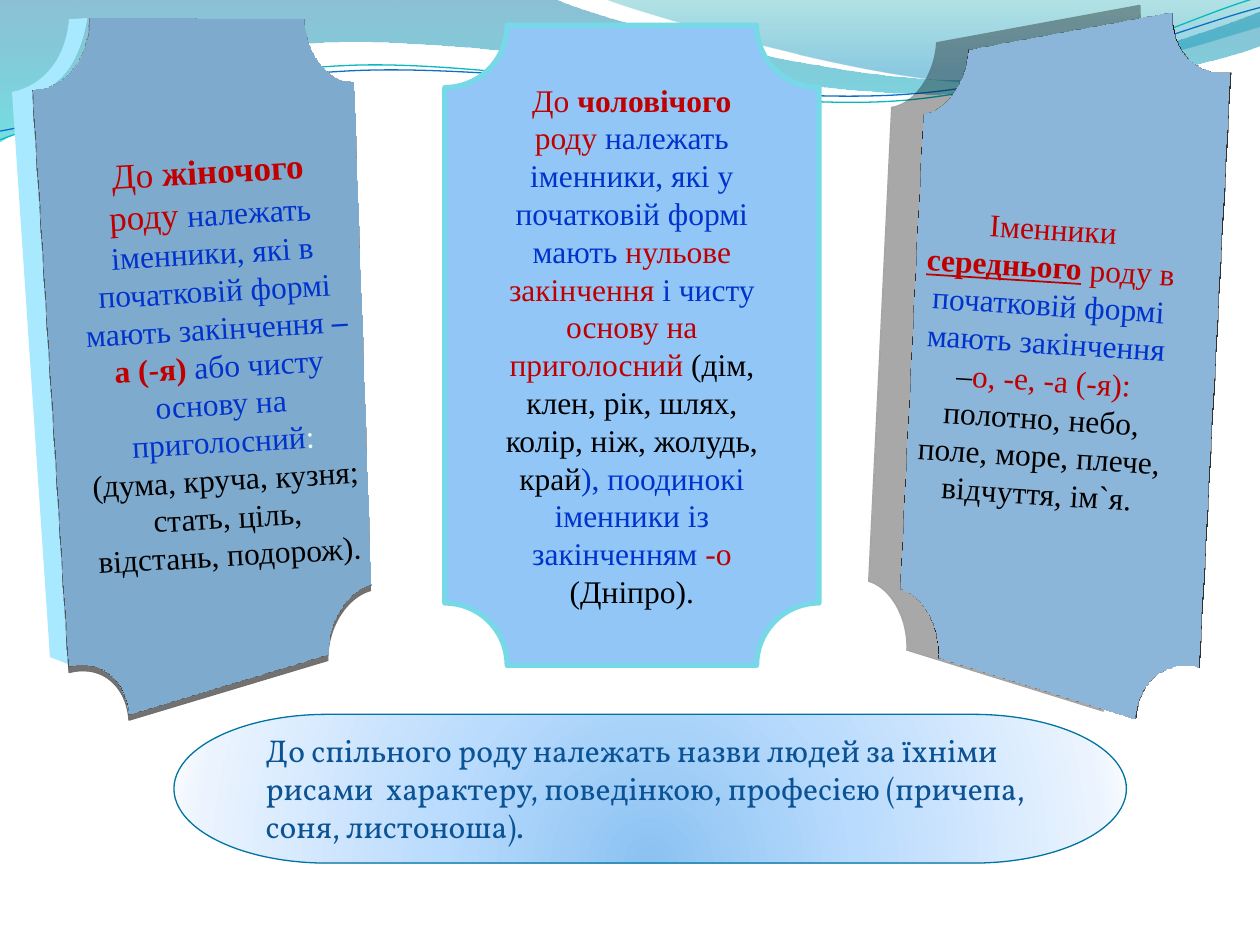
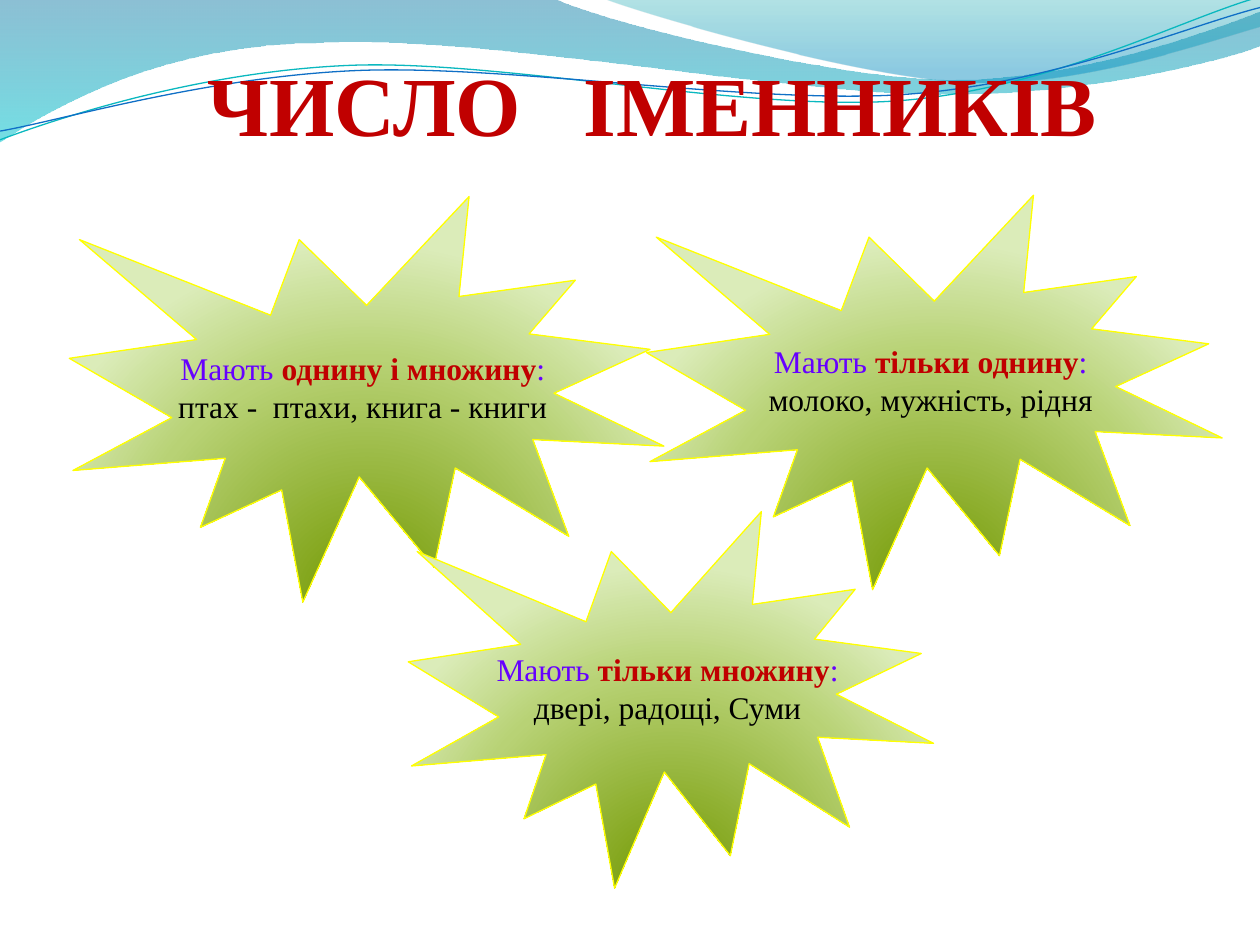
"""Build two slides on the gender and number of Ukrainian nouns."""
from dataclasses import dataclass
from typing import NamedTuple

from lxml import etree
from pptx import Presentation
from pptx.dml.color import RGBColor
from pptx.enum.shapes import MSO_SHAPE as Preset
from pptx.enum.text import MSO_ANCHOR as Anchor, MSO_AUTO_SIZE as AutoSize, PP_ALIGN as Align
from pptx.oxml import parse_xml
from pptx.oxml.ns import nsdecls, qn
from pptx.util import Pt


@dataclass(frozen=True)
class Theme:
    """Colours, fonts and type sizes shared by the slides."""
    red: str = "C00000"
    blue: str = "0033CC"
    violet: str = "6600FF"
    black: str = "000000"
    pale: str = "E9F9FB"
    note: str = "0B5394"
    panel: str = "91C6F7"
    panel_left: str = "6F9ABE"
    panel_right: str = "658FB2"
    panel_edge: str = "77D9E8"
    panel_side: str = "A9E9FF"
    white: str = "FFFFFF"
    note_edge: str = "0074A1"
    star_edge: str = "FFFF00"
    teal_line: str = "0AB8BF"
    blue_line: str = "0F6FC6"
    serif: str = "Times New Roman"
    note_font: str = "Vollkorn"
    title_size: int = 48
    lead_size: int = 20
    body_size: int = 18
    wave_main: tuple = ((0, "0074A1", 45), (100, "00C6CF", 55))
    wave_side: tuple = ((0, "00A1A9", 30), (80, "008BBF", 45))
    note_fill: tuple = ((0, "8BC2F1", 100), (43, "B9DBFD", 100),
                        (93, "EAF3FE", 100), (100, "F8FBFF", 100))
    star_fill: tuple = ((0, "729800", 100), (68, "B8D275", 100), (100, "DBECB9", 100))


THEME = Theme()
LINEAR = '<a:lin ang="5400000" scaled="0"/>'
RADIAL = ('<a:path path="circle"><a:fillToRect l="50000" t="130000" '
          'r="50000" b="-30000"/></a:path>')


class Text(NamedTuple):
    """A run of text with its formatting."""
    words: str
    color: str
    bold: bool = False
    underline: bool = False
    size: int = THEME.body_size
    font: str = THEME.serif


class Camera(NamedTuple):
    """A perspective view, with angles in degrees."""
    preset: str
    field: int
    latitude: float
    longitude: float
    revolution: float


LEFT_VIEW = Camera("perspectiveHeroicExtremeRightFacing", 55, 8.1, 324, 2.7)
RIGHT_VIEW = Camera("perspectiveHeroicExtremeLeftFacing", 80, 0.8, 37, 0.2)
WAVES = (
    ((0, -0.7), (316.8, -0.7), (342.7, 12.2, 478.1, 45.4, 545.8, 45.4),
     (614.2, 45.4, 689.8, 18.7, 720, 6.5), (720.7, 25.9),
     (707.8, 31.7, 626.4, 54.7, 537.1, 54), (447.8, 54, 275, 20.2, 185, 24.5),
     (92.9, 25.2, 33.1, 59.8, -0.7, 81.4)),
    ((344.9, -0.7), (366.5, 7.9, 491, 44.6, 553.7, 46.8),
     (616.3, 49.7, 691.9, 23, 720, 15.1), (720, 0)),
)
WAVE_LINES = (
    ((0, 79.9), (34.6, 67, 113.8, 41, 199.4, 37.4),
     (284.4, 33.8, 427, 64.1, 513.4, 57.6), (599.8, 51.1, 675.4, 10.8, 718.6, -1.4)),
    ((0, 74.9), (33.8, 69.1, 118.1, 43.9, 203.8, 40.3),
     (290.2, 36.7, 429.8, 59.8, 516.2, 54), (601.9, 48.2, 677.5, 15.1, 720, 4.3)),
)
PANEL_SIDE = ((6.9, 52.6), (28, 48, 38, 30, 39.5, 11), (50, 10.3),
              (46, 34, 36, 49, 20, 53), (39, 379.5), (28.6, 375.5))
FEMININE = (
    Text("До ", THEME.red, size=THEME.lead_size),
    Text("жіночого", THEME.red, True, size=THEME.lead_size),
    Text(" роду ", THEME.red, size=THEME.lead_size),
    Text("належать іменники, які в початковій формі мають закінчення ", THEME.blue),
    Text("– ", THEME.blue, True),
    Text("а (-я) ", THEME.red, True),
    Text("або чисту основу на приголосний", THEME.blue),
    Text(": ", THEME.pale),
    Text("(дума, круча, кузня; стать, ціль, відстань, подорож).", THEME.black),
)
MASCULINE = (
    Text("До ", THEME.red),
    Text("чоловічого", THEME.red, True),
    Text(" роду ", THEME.red),
    Text("належать іменники, які у початковій формі мають ", THEME.blue),
    Text("нульове закінчення ", THEME.red),
    Text("і чисту ", THEME.blue),
    Text("основу на приголосний ", THEME.red),
    Text("(дім, клен, рік, шлях, колір, ніж, жолудь, край", THEME.black),
    Text("), поодинокі іменники із закінченням ", THEME.blue),
    Text("-о ", THEME.red),
    Text("(Дніпро).", THEME.black),
)
NEUTER = (
    Text("Іменники ", THEME.red),
    Text("середнього", THEME.red, True, True),
    Text(" роду в ", THEME.red),
    Text("початковій формі мають закінчення ", THEME.blue),
    Text("–", THEME.black),
    Text("о, -е, -а (-я):", THEME.red),
    Text(" полотно, небо, поле, море, плече, відчуття, ім`я.", THEME.black),
)
COMMON = ("До спільного роду належать назви людей за їхніми рисами  характеру, "
          "поведінкою, професією (причепа, соня, листоноша).")
STARS = (
    ((39.6, 112.3, 339.8, 231.8), "однину і множину", "птах -  птахи, книга - книги"),
    ((233.3, 292.3, 300.2, 215.3), "тільки множину", "двері, радощі, Суми"),
    ((369.4, 111.6, 329, 225.4), "тільки однину", "молоко, мужність, рідня"),
)


def points(*values):
    """Convert numbers to lengths in points."""
    return [Pt(value) for value in values]


def set_fill(shape, color):
    """Fill a shape with one colour."""
    shape.fill.solid()
    shape.fill.fore_color.rgb = RGBColor.from_string(color)


def set_gradient(shape, stops, direction):
    """Fill a shape with a gradient of (position, colour, opacity) stops."""
    marks = "".join(
        f'<a:gs pos="{position * 1000}"><a:srgbClr val="{color}">'
        f'<a:alpha val="{opacity * 1000}"/></a:srgbClr></a:gs>'
        for position, color, opacity in stops)
    shape.fill.gradient()
    properties = shape.element.spPr
    properties.replace(properties.find(qn("a:gradFill")), parse_xml(
        f'<a:gradFill {nsdecls("a")} rotWithShape="1"><a:gsLst>{marks}</a:gsLst>'
        f'{direction}</a:gradFill>'))


def set_line(shape, color=None, width=0.75):
    """Outline a shape, or remove its outline."""
    if color is None:
        shape.line.fill.background()
    else:
        shape.line.color.rgb = RGBColor.from_string(color)
        shape.line.width = Pt(width)


def set_shadow(shape, opacity, blur, distance, angle):
    """Give a shape a black outer shadow."""
    effects = shape.element.spPr.find(qn("a:effectLst"))
    effects.append(parse_xml(
        f'<a:outerShdw {nsdecls("a")} blurRad="{Pt(blur)}" dist="{Pt(distance)}" '
        f'dir="{angle * 60000}" rotWithShape="0"><a:srgbClr val="{THEME.black}">'
        f'<a:alpha val="{opacity * 1000}"/></a:srgbClr></a:outerShdw>'))


def set_perspective(shape, camera):
    """Turn a shape in space and give it a thin edge."""
    preset, *degrees = camera
    angles = [round(degree * 60000) for degree in degrees]
    properties = shape.element.spPr
    properties.append(parse_xml(
        '<a:scene3d {}><a:camera prst="{}" fov="{}"><a:rot lat="{}" lon="{}" rev="{}"/>'
        '</a:camera><a:lightRig rig="threePt" dir="t"/></a:scene3d>'.format(
            nsdecls("a"), preset, *angles)))
    solid = etree.SubElement(properties, qn("a:sp3d"), extrusionH=str(Pt(1)))
    color = etree.SubElement(solid, qn("a:extrusionClr"))
    etree.SubElement(color, qn("a:srgbClr"), val=THEME.white)


def write(frame, paragraphs, alignment):
    """Fill a text frame with paragraphs, run by run."""
    for index, texts in enumerate(paragraphs):
        paragraph = frame.add_paragraph() if index else frame.paragraphs[0]
        paragraph.alignment = alignment
        for text in texts:
            run = paragraph.add_run()
            run.text = text.words
            run.font.name = text.font
            run.font.size = Pt(text.size)
            run.font.bold = text.bold
            run.font.underline = text.underline
            run.font.color.rgb = RGBColor.from_string(text.color)


def add_curve(slide, segments, closed):
    """Add an outline of lines and cubic curves to a slide."""
    start, *rest = segments
    builder = slide.shapes.build_freeform(*points(*start))
    for segment in rest:
        pairs = zip(segment[::2], segment[1::2])
        builder.add_line_segments([points(*pair) for pair in pairs], close=False)
    shape = builder.convert_to_shape()
    outline = next(shape.element.iter(qn("a:path")))
    steps = iter(outline.findall(qn("a:lnTo")))
    for segment in rest:
        first, *others = [next(steps) for _ in segment[::2]]
        if others:
            first.tag = qn("a:cubicBezTo")
        for other in others:
            first.append(other[0])
            outline.remove(other)
    if closed:
        etree.SubElement(outline, qn("a:close"))
    shape.shadow.inherit = False
    return shape


def add_waves(slide, master):
    """Draw the wave band and hand it to the master."""
    shapes = []
    for segments, stops in zip(WAVES, (THEME.wave_main, THEME.wave_side)):
        wave = add_curve(slide, segments, True)
        set_gradient(wave, stops, LINEAR)
        set_line(wave)
        shapes.append(wave)
    for segments, color in zip(WAVE_LINES, (THEME.teal_line, THEME.blue_line)):
        curve = add_curve(slide, segments, False)
        curve.fill.background()
        set_line(curve, color)
        shapes.append(curve)
    tree = master.element.cSld.spTree
    for index, shape in enumerate(shapes, start=2):
        tree.insert(index, shape.element)


def add_preset(slide, preset, box):
    """Add a preset shape without a shadow, its text centred in height."""
    shape = slide.shapes.add_shape(preset, *points(*box))
    shape.shadow.inherit = False
    shape.text_frame.vertical_anchor = Anchor.MIDDLE
    return shape


def add_panel(slide, box, texts, color):
    """Add a plaque that describes one gender."""
    panel = add_preset(slide, Preset.PLAQUE, box)
    set_fill(panel, color)
    set_line(panel)
    panel.text_frame.word_wrap = True
    write(panel.text_frame, [texts], Align.CENTER)
    return panel


def add_note(slide):
    """Add the rounded note on the common gender."""
    note = add_preset(slide, Preset.FLOWCHART_TERMINATOR, (99.4, 408.2, 544.3, 85))
    set_gradient(note, THEME.note_fill, RADIAL)
    set_line(note, THEME.note_edge)
    frame = slide.shapes.add_textbox(*points(144.7, 414.2, 453.6, 72.7)).text_frame
    frame.word_wrap = True
    frame.auto_size = AutoSize.SHAPE_TO_FIT_TEXT
    write(frame, [[Text(COMMON, THEME.note, font=THEME.note_font)]], Align.LEFT)


def add_star(slide, box, number, examples):
    """Add a star with a number category and its examples."""
    star = add_preset(slide, Preset.EXPLOSION1, box)
    set_gradient(star, THEME.star_fill, RADIAL)
    set_line(star, THEME.star_edge)
    star.text_frame.word_wrap = False
    heading = (Text("Мають ", THEME.violet), Text(number, THEME.red, True),
               Text(":", THEME.violet))
    write(star.text_frame, [heading, [Text(examples, THEME.black)]], Align.CENTER)


def set_title(slide, words):
    """Place and format the slide title."""
    title = slide.shapes.title
    title.left, title.top, title.width, title.height = points(49, 9.4, 648, 78.5)
    frame = title.text_frame
    frame.vertical_anchor = Anchor.BOTTOM
    frame.margin_left = frame.margin_right = frame.margin_bottom = Pt(0)
    frame.margin_top = Pt(3.6)
    write(frame, [[Text(words, THEME.red, True, size=THEME.title_size)]], Align.CENTER)


def build_gender_slide(slide):
    """Build the slide on the gender of nouns."""
    side = add_curve(slide, PANEL_SIDE, True)
    set_fill(side, THEME.panel_side)
    set_line(side)
    feminine = add_panel(slide, (15.1, 15.1, 219.6, 382.3), FEMININE, THEME.panel_left)
    set_shadow(feminine, 33, 17.8, 4, 87)
    set_perspective(feminine, LEFT_VIEW)
    masculine = add_panel(slide, (254.2, 14.4, 213.8, 365.8), MASCULINE, THEME.panel)
    set_line(masculine, THEME.panel_edge, 3)
    neuter = add_panel(slide, (490.3, 20.2, 213.8, 371.5), NEUTER, THEME.panel_right)
    neuter.rotation = 3.1
    set_shadow(neuter, 18, 14.5, 19, 192)
    set_perspective(neuter, RIGHT_VIEW)
    add_note(slide)


def main():
    """Build and save the presentation."""
    presentation = Presentation()
    presentation.slide_width, presentation.slide_height = points(720, 540)
    title_only, blank = (presentation.slide_layouts[index] for index in (5, 6))
    gender_slide = presentation.slides.add_slide(blank)
    add_waves(gender_slide, presentation.slide_master)
    build_gender_slide(gender_slide)
    number_slide = presentation.slides.add_slide(title_only)
    set_title(number_slide, "ЧИСЛО   ІМЕННИКІВ")
    for star in STARS:
        add_star(number_slide, *star)
    presentation.save("out.pptx")


if __name__ == "__main__":
    main()
